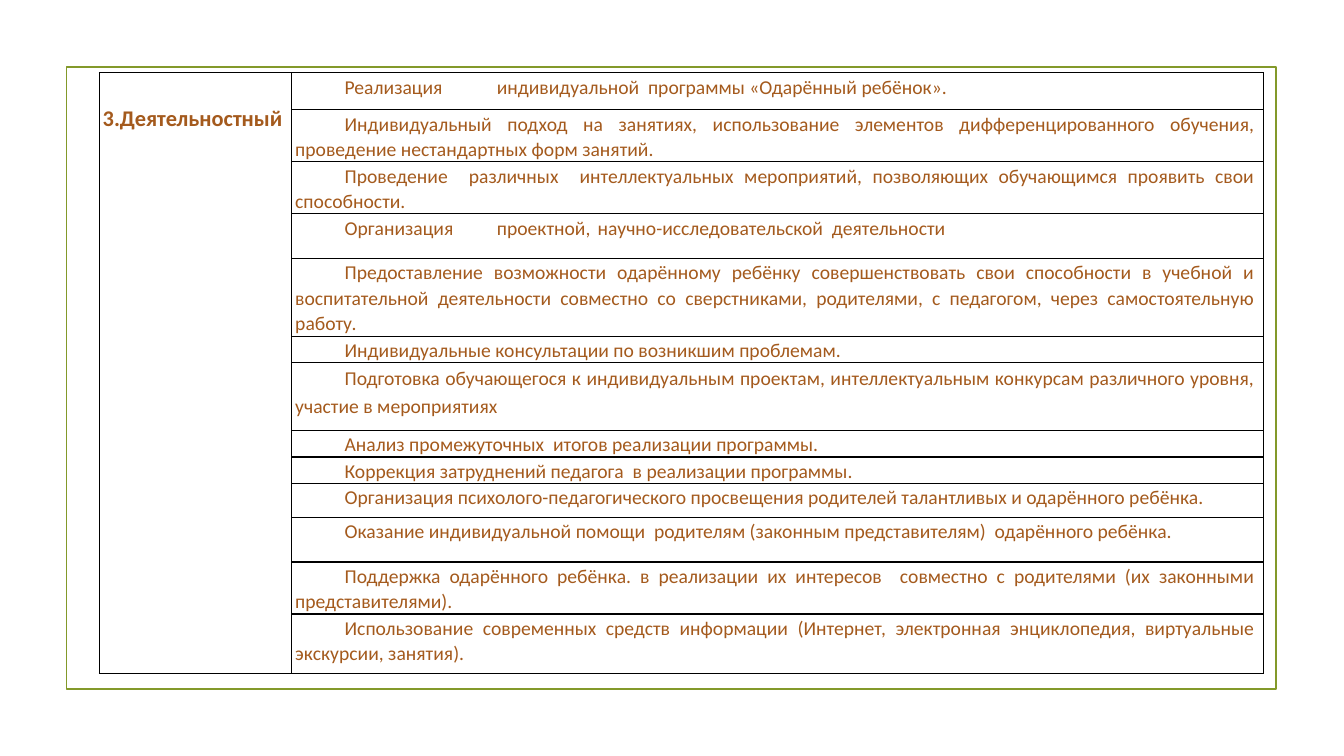
import pptx
import pptx.dml.color
import pptx.enum.shapes
import pptx.enum.text
import pptx.oxml
import pptx.oxml.ns
import pptx.util

Pt = pptx.util.Pt
JUSTIFY = pptx.enum.text.PP_ALIGN.JUSTIFY
LEFT = pptx.enum.text.PP_ALIGN.LEFT
BROWN = "A45A1D"
STAGE = " 3.Деятельностный"
ACTIVITIES = [
    (26.5, "Реализация \tиндивидуальной \tпрограммы «Одарённый ребёнок».", {"tabs": (144, 252), "after": 2.9}),
    (36.5, "Индивидуальный подход на занятиях, использование элементов дифференцированного обучения, "
           "проведение нестандартных форм занятий.", {"align": JUSTIFY}),
    (36.5, "Проведение  различных  интеллектуальных мероприятий, позволяющих обучающимся проявить свои "
           "способности.", {"align": JUSTIFY}),
    (32, "Организация \tпроектной, \tнаучно-исследовательской  деятельности", {"tabs": (144, 216), "after": 3}),
    (54.5, "Предоставление возможности одарённому ребёнку совершенствовать свои способности в учебной и "
           "воспитательной деятельности совместно со сверстниками, родителями, с педагогом, через "
           "самостоятельную работу.", {"align": JUSTIFY}),
    (18, "Индивидуальные консультации по возникшим проблемам.", {}),
    (48.5, "Подготовка обучающегося к индивидуальным проектам, интеллектуальным конкурсам различного уровня, "
           "участие в мероприятиях", {"align": JUSTIFY, "spacing": 1.15}),
    (18, "Анализ промежуточных  итогов реализации программы.", {}),
    (18, "Коррекция затруднений педагога  в реализации программы.", {}),
    (24, "Организация психолого-педагогического просвещения родителей талантливых и одарённого ребёнка.", {}),
    (32, "Оказание индивидуальной помощи  родителям (законным представителям)  одарённого ребёнка.",
     {"after": 2.8}),
    (36.5, "Поддержка одарённого ребёнка. в реализации их интересов  совместно с родителями (их законными "
           "представителями).", {"align": JUSTIFY}),
    (41, "Использование современных средств информации (Интернет, электронная энциклопедия, виртуальные "
         "экскурсии, занятия).", {"align": JUSTIFY}),
]


def color(value):
    """Turn a hex string into a colour."""
    return pptx.dml.color.RGBColor.from_string(value)


def write_text(cell, text, size=14, bold=False, align=LEFT, spacing=1.07, after=0, tabs=(), right=6):
    """Write one formatted paragraph with a first-line indent into a cell."""
    cell.margin_left, cell.margin_top = Pt(2.4), Pt(0.7)
    cell.margin_right, cell.margin_bottom = Pt(right), Pt(0)
    paragraph = cell.text_frame.paragraphs[0]
    paragraph.text = text
    paragraph.alignment = align
    paragraph.line_spacing = spacing
    paragraph.space_before, paragraph.space_after = Pt(0), Pt(after)
    properties = paragraph._p.get_or_add_pPr()
    properties.set("marL", "0")
    properties.set("indent", str(Pt(35.3)))
    if tabs:
        tab_list = pptx.oxml.parse_xml(f'<a:tabLst {pptx.oxml.ns.nsdecls("a")}/>')
        for position in tabs:
            tab_list.append(pptx.oxml.parse_xml(
                f'<a:tab {pptx.oxml.ns.nsdecls("a")} pos="{Pt(position)}" algn="l"/>'))
        properties.append(tab_list)
    font = paragraph.runs[0].font
    font.name, font.size, font.bold = "Calibri", Pt(size), bold
    font.color.rgb = color(BROWN)


def set_borders(cell, value="000000", width=1):
    """Outline all four sides of an unfilled cell."""
    cell.fill.background()
    properties = cell._tc.get_or_add_tcPr()
    for index, side in enumerate(("lnL", "lnR", "lnT", "lnB")):
        properties.insert(index, pptx.oxml.parse_xml(
            f'<a:{side} {pptx.oxml.ns.nsdecls("a")} w="{Pt(width)}"><a:solidFill>'
            f'<a:srgbClr val="{value}"/></a:solidFill></a:{side}>'))


def add_frame(slide, left, top, width, height):
    """Draw the green frame around the slide content."""
    frame = slide.shapes.add_shape(
        pptx.enum.shapes.MSO_SHAPE.RECTANGLE, Pt(left), Pt(top), Pt(width), Pt(height))
    frame.shadow.inherit = False
    frame.fill.background()
    frame.line.color.rgb = color("83992A")
    frame.line.width = Pt(1.25)


def add_activity_table(slide, left, top, width, stage_width=137.5):
    """Build the table with one stage cell beside its activities."""
    height = sum(row_height for row_height, _, _ in ACTIVITIES)
    table = slide.shapes.add_table(
        len(ACTIVITIES), 2, Pt(left), Pt(top), Pt(width), Pt(height)).table
    table.first_row = table.horz_banding = False
    table.columns[0].width = Pt(stage_width)
    table.columns[1].width = Pt(width - stage_width)
    for index, (row_height, text, text_format) in enumerate(ACTIVITIES):
        table.rows[index].height = Pt(row_height)
        write_text(table.cell(index, 1), text, **text_format)
    for cell in table.iter_cells():
        set_borders(cell)
    table.cell(0, 0).merge(table.cell(len(ACTIVITIES) - 1, 0))
    write_text(table.cell(0, 0), STAGE, size=16, bold=True, right=0)


def main():
    """Build and save the presentation."""
    presentation = pptx.Presentation()
    presentation.slide_width, presentation.slide_height = Pt(960), Pt(540)
    slide = presentation.slides.add_slide(presentation.slide_layouts.get_by_name("Blank"))
    add_frame(slide, 47.5, 48, 864, 444)
    add_activity_table(slide, 71, 52, 831.5)
    presentation.save("out.pptx")


if __name__ == "__main__":
    main()
